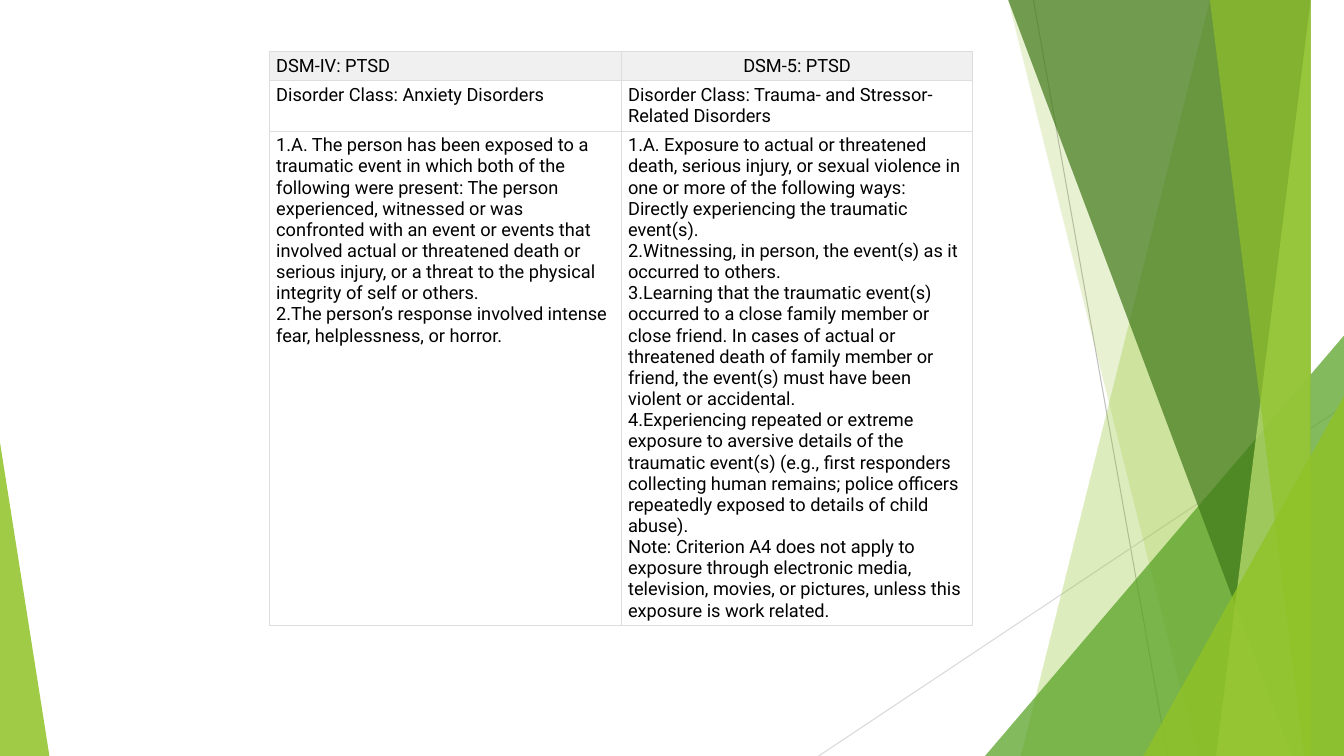
from dataclasses import dataclass

from lxml.etree import SubElement
from pptx import Presentation
from pptx.dml.color import RGBColor
from pptx.enum.shapes import MSO_CONNECTOR as Connector, MSO_SHAPE as Shape
from pptx.enum.text import MSO_ANCHOR as Anchor, PP_ALIGN as Align
from pptx.oxml.ns import qn
from pptx.util import Inches, Pt


@dataclass(frozen=True)
class Theme:
    font: str = "Roboto"
    size: float = 13
    rule: float = 0.75
    text: str = "000000"
    paper: str = "FFFFFF"
    header: str = "F0F0F0"
    border: str = "DDDDDD"
    lime: str = "90C226"
    pale: str = "C0E474"
    leaf: str = "54A021"
    forest: str = "3F7819"


THEME = Theme()
WIDTH, HEIGHT = 13.33, 7.5

HEADERS = ["DSM-IV: PTSD", "DSM-5: PTSD"]
CLASSES = [
    "Disorder Class: Anxiety Disorders",
    "Disorder Class: Trauma- and Stressor-Related Disorders",
]
CRITERIA = [
    [
        "A. The person has been exposed to a traumatic event in which both of the following were present: "
        "The person experienced, witnessed or was confronted with an event or events that involved actual "
        "or threatened death or serious injury, or a threat to the physical integrity of self or others.",
        "The person’s response involved intense fear, helplessness, or horror.",
    ],
    [
        "A. Exposure to actual or threatened death, serious injury, or sexual violence in one or more of "
        "the following ways: Directly experiencing the traumatic event(s).",
        "Witnessing, in person, the event(s) as it occurred to others.",
        "Learning that the traumatic event(s) occurred to a close family member or close friend. In cases "
        "of actual or threatened death of family member or friend, the event(s) must have been violent or "
        "accidental.",
        "Experiencing repeated or extreme exposure to aversive details of the traumatic event(s) (e.g., "
        "first responders collecting human remains; police officers repeatedly exposed to details of "
        "child abuse).",
    ],
]
NOTE = ("Note: Criterion A4 does not apply to exposure through electronic media, television, movies, "
        "or pictures, unless this exposure is work related.")

TABLE_LEFT, TABLE_TOP = 2.67, 0.51
COLUMN_WIDTH = 3.49
ROW_HEIGHTS = [0.27, 0.48, 4.76]
MARGIN_X, MARGIN_Y = 0.07, 0.04

# Lines: start, end, colour
RAYS = [
    ((10.25, 0), (11.58, HEIGHT), "BFBFBF"),
    ((WIDTH, 4.03), (8.12, HEIGHT), "D9D9D9"),
]
# Back to front. Bands: top x, bottom x; they reach the right edge.
# Wedges: left, top, width, apex share; they reach the bottom edge.
FACETS = [
    ("band", (12.28, 10.04), THEME.lime, 30),
    ("band", (10.5, 11.83), THEME.lime, 20),
    ("wedge", (9.77, 3.33, 3.56, 1), THEME.leaf, 72),
    ("band", (10.21, 12.91), THEME.forest, 70),
    ("band", (13.03, 11.92), THEME.pale, 70),
    ("band", (11.96, 13.18), THEME.lime, 65),
    ("wedge", (11.34, 3.93, 1.99, 1), THEME.lime, 80),
    ("wedge", (0, 4.39, 0.49, 0), THEME.lime, 85),
]


def color(code):
    return RGBColor.from_string(code)


def add_ray(page, start, end, code):
    ray = page.shapes.add_connector(Connector.STRAIGHT, *map(Inches, start + end))
    ray.line.color.rgb = color(code)
    ray.line.width = Pt(THEME.rule)
    SubElement(ray._element.spPr, qn("a:effectLst"))


def add_band(page, top_x, bottom_x):
    builder = page.shapes.build_freeform(top_x, 0, scale=Inches(1))
    builder.add_line_segments([(WIDTH, 0), (WIDTH, HEIGHT), (bottom_x, HEIGHT)], close=True)
    return builder.convert_to_shape()


def add_wedge(page, left, top, width, apex):
    wedge = page.shapes.add_shape(
        Shape.ISOSCELES_TRIANGLE, *map(Inches, (left, top, width, HEIGHT - top)))
    wedge.adjustments[0] = apex
    return wedge


def paint(shape, code, opacity):
    shape.shadow.inherit = False
    shape.line.fill.background()
    shape.fill.solid()
    shape.fill.fore_color.rgb = color(code)
    tint = shape._element.spPr.find(qn("a:solidFill"))[0]
    SubElement(tint, qn("a:alpha"), val=str(opacity * 1000))


def add_borders(cell):
    """Put the four edges ahead of the fill, as the schema asks."""
    props = cell._tc.get_or_add_tcPr()
    for index, side in enumerate(("lnL", "lnR", "lnT", "lnB")):
        edge = SubElement(props, qn(f"a:{side}"), w=str(Pt(THEME.rule)))
        fill = SubElement(edge, qn("a:solidFill"))
        SubElement(fill, qn("a:srgbClr"), val=THEME.border)
        props.insert(index, edge)


def write_cell(cell, items, fill, anchor=Anchor.TOP, align=Align.LEFT):
    """Items are pairs of text and whether it is numbered."""
    cell.fill.solid()
    cell.fill.fore_color.rgb = color(fill)
    cell.vertical_anchor = anchor
    cell.margin_left = cell.margin_right = Inches(MARGIN_X)
    cell.margin_top = cell.margin_bottom = Inches(MARGIN_Y)
    add_borders(cell)
    for index, (text, numbered) in enumerate(items):
        frame = cell.text_frame
        para = frame.add_paragraph() if index else frame.paragraphs[0]
        para.alignment = align
        if numbered:
            props = para._p.get_or_add_pPr()
            props.set("marL", "0")
            props.set("indent", "0")
            SubElement(props, qn("a:buFont"), typeface=THEME.font)
            SubElement(props, qn("a:buAutoNum"), type="arabicPeriod")
        span = para.add_run()
        span.text = text
        span.font.name = THEME.font
        span.font.size = Pt(THEME.size)
        span.font.bold = False
        span.font.color.rgb = color(THEME.text)


def add_comparison(page):
    count = len(HEADERS)
    table = page.shapes.add_table(
        len(ROW_HEIGHTS), count, Inches(TABLE_LEFT), Inches(TABLE_TOP),
        Inches(COLUMN_WIDTH * count), Inches(sum(ROW_HEIGHTS))).table
    table.first_row = table.horz_banding = False
    for row, height in zip(table.rows, ROW_HEIGHTS):
        row.height = Inches(height)
    for index in range(count):
        table.columns[index].width = Inches(COLUMN_WIDTH)
        last = index == count - 1
        write_cell(table.cell(0, index), [(HEADERS[index], False)], THEME.header,
                   Anchor.BOTTOM, Align.CENTER if last else Align.LEFT)
        write_cell(table.cell(1, index), [(CLASSES[index], False)], THEME.paper)
        items = [(text, True) for text in CRITERIA[index]]
        if last:
            items.append((NOTE, False))
        write_cell(table.cell(2, index), items, THEME.paper)


def main():
    deck = Presentation()
    deck.slide_width, deck.slide_height = Inches(WIDTH), Inches(HEIGHT)
    page = deck.slides.add_slide(deck.slide_layouts[6])
    for ray in RAYS:
        add_ray(page, *ray)
    makers = {"band": add_band, "wedge": add_wedge}
    for kind, place, code, opacity in FACETS:
        paint(makers[kind](page, *place), code, opacity)
    add_comparison(page)
    deck.save("out.pptx")


if __name__ == "__main__":
    main()
